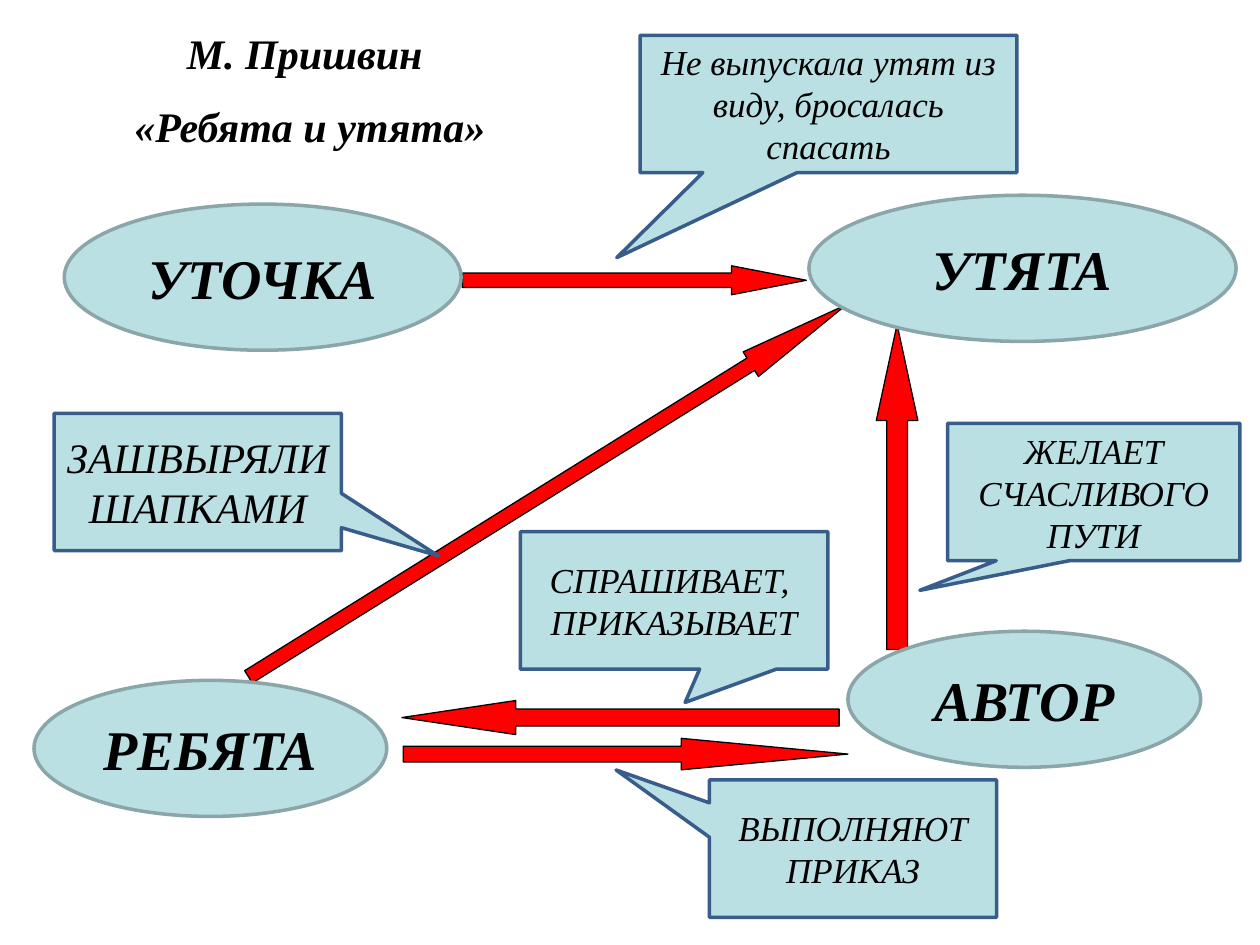
"""Build a slide mapping who does what in the story of the children and the ducklings."""
import pptx
import pptx.util
import pptx.dml.color
import pptx.enum.shapes
import pptx.enum.text

Inches = pptx.util.Inches
Pt = pptx.util.Pt
RGBColor = pptx.dml.color.RGBColor
KIND = pptx.enum.shapes.MSO_SHAPE
ANCHOR = pptx.enum.text.MSO_ANCHOR
CENTER = pptx.enum.text.PP_ALIGN.CENTER

RED = RGBColor(0xFF, 0x00, 0x00)
BLACK = RGBColor(0x00, 0x00, 0x00)
PALE = RGBColor(0xBB, 0xE0, 0xE3)
BLUE = RGBColor(0x38, 0x5D, 0x8A)
GRAY = RGBColor(0x8A, 0xA6, 0xA8)

deck = pptx.Presentation()
deck.slide_width = Inches(10)
deck.slide_height = Inches(7.5)
slide = deck.slides.add_slide(deck.slide_layouts[6])


def draw(kind, box, fill, edge, width):
    shape = slide.shapes.add_shape(kind, *map(Inches, box))
    shape.shadow.inherit = False
    shape.fill.solid()
    shape.fill.fore_color.rgb = fill
    shape.line.color.rgb = edge
    shape.line.width = Pt(width)
    return shape


def write(shape, text, size, bold, gap=0):
    frame = shape.text_frame
    frame.word_wrap = True
    frame.text = text
    for para in frame.paragraphs:
        para.alignment = CENTER
        para.space_before = Pt(gap)
        for run in para.runs:
            run.font.name = "Times New Roman"
            run.font.size = Pt(size)
            run.font.bold = bold
            run.font.italic = True
            run.font.color.rgb = BLACK


arrows = [
    ((3.67, 2.11, 2.73, 0.23), 0, 2.58),
    ((1.55, 3.78, 5.59, 0.23), 328.1, 3.89),
    ((3.19, 5.56, 3.47, 0.27), 180, 3.34),
    ((3.2, 5.86, 3.53, 0.25), 0, 5.29),
    ((5.83, 3.7, 2.58, 0.33), 270, 2.31),
]
for box, turn, head in arrows:
    arrow = draw(KIND.RIGHT_ARROW, box, RED, BLACK, 0.75)
    arrow.rotation = turn
    arrow.adjustments[0] = 0.5
    arrow.adjustments[1] = head

notes = [
    ("ЖЕЛАЕТ СЧАСЛИВОГО ПУТИ", (7.52, 3.36, 2.32), (-0.595, 0.716), 20),
    ("СПРАШИВАЕТ, \nПРИКАЗЫВАЕТ", (4.13, 4.22, 2.44), (0.036, 0.743), 20),
    ("ЗАШВЫРЯЛИ ШАПКАМИ", (0.43, 3.28, 2.28), (0.837, 0.538), 24),
    ("Не выпускала утят из виду, бросалась спасать",
     (5.08, 0.28, 2.99), (-0.562, 1.119), 20),
    ("ВЫПОЛНЯЮТ ПРИКАЗ", (5.63, 6.19, 2.28), (-0.825, -0.573), 20),
]
for text, place, tip, size in notes:
    note = draw(KIND.RECTANGULAR_CALLOUT, (*place, 1.09), PALE, BLUE, 2)
    note.adjustments[0], note.adjustments[1] = tip
    note.text_frame.vertical_anchor = ANCHOR.MIDDLE
    write(note, text, size, False)

title = slide.shapes.add_textbox(Inches(0.04), Inches(0.17), Inches(4.84), Inches(1.11))
write(title, "М. Пришвин \n«Ребята и утята»", 24, True, 13)
title.text_frame.auto_size = pptx.enum.text.MSO_AUTO_SIZE.SHAPE_TO_FIT_TEXT

heroes = [
    ("УТОЧКА", (0.51, 1.62, 3.15, 1.16)),
    ("УТЯТА", (6.42, 1.55, 3.39, 1.16)),
    ("РЕБЯТА", (0.27, 5.4, 2.8, 1.08)),
    ("АВТОР", (6.73, 5.01, 2.8, 1.08)),
]
for name, box in heroes:
    hero = draw(KIND.OVAL, box, PALE, GRAY, 2)
    hero.text_frame.vertical_anchor = ANCHOR.MIDDLE
    write(hero, name, 32, True)

deck.save("out.pptx")
